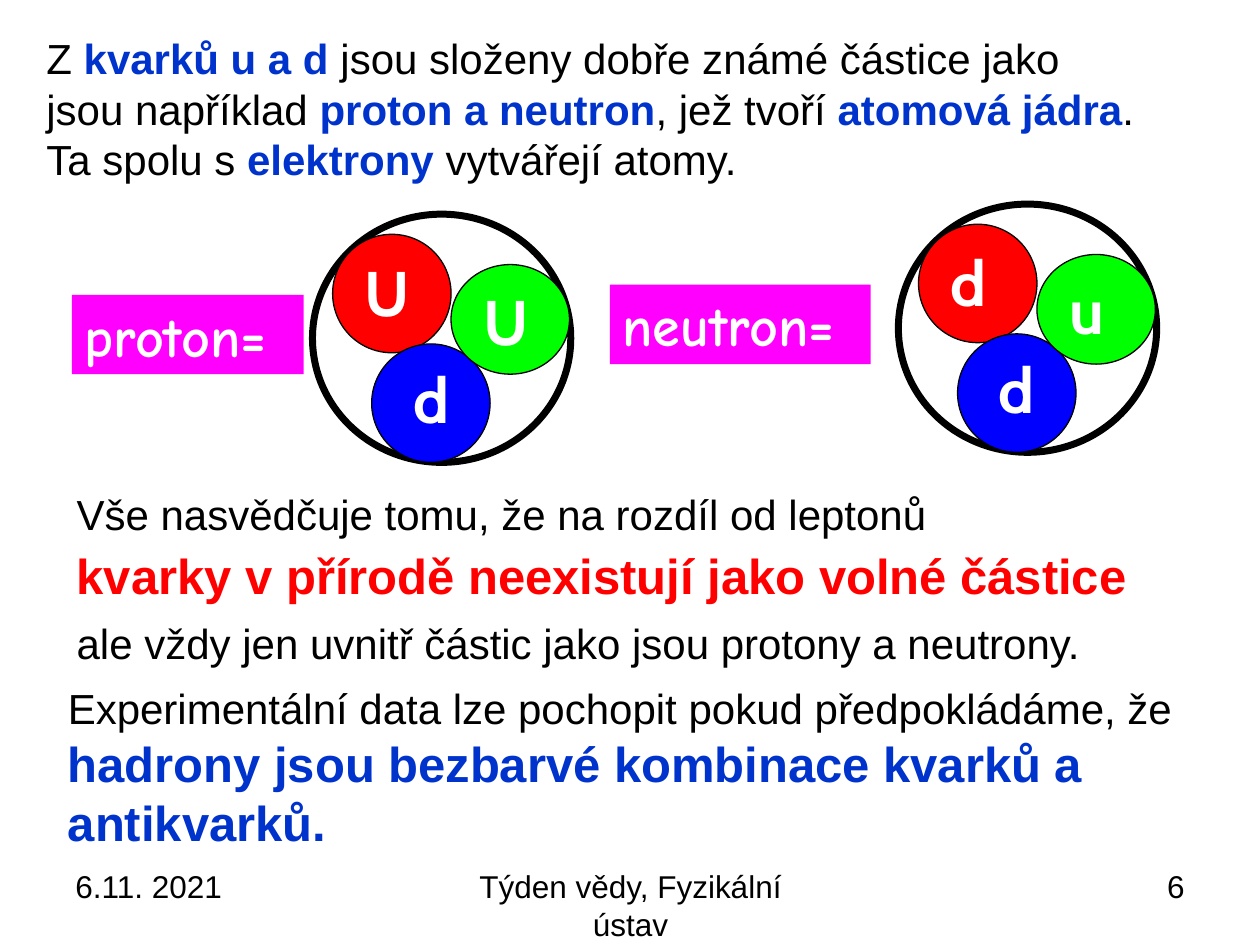
from pptx import Presentation, util as u
from pptx.dml import color
from pptx.enum import shapes, text

COLUMNS, ROWS = 100, 75
CELL = u.Inches(0.1)
BLACK, WHITE, RED, GREEN, BLUE = "000000", "FFFFFF", "FF0000", "00FF00", "0000FF"
ACCENT, MAGENTA = "0033CC", "FF00FF"
LEFT, CENTER, RIGHT = text.PP_ALIGN.LEFT, text.PP_ALIGN.CENTER, text.PP_ALIGN.RIGHT

PLAIN = {"size": u.Pt(24), "name": "Arial", "bold": False, "color": BLACK}
STRONG = PLAIN | {"bold": True, "color": ACCENT}
LARGE = STRONG | {"size": u.Pt(28)}
WARNING = LARGE | {"color": RED}
FOOTER = PLAIN | {"size": u.Pt(18)}
LETTER = {"size": u.Pt(36), "name": "Cabin", "bold": True, "color": WHITE}
LABEL = LETTER | {"size": u.Pt(32), "name": "Comic Neue"}

# Quark circle (column, row, width, height, fill) and its letter (column, row),
# measured from the corner of the hadron
QUARKS = [
    ((1.6, 1.6, 9.4, 9.4, RED), (3.15, 2.6)),
    ((4.7, 10.3, 9.4, 9.4, BLUE), (7, 11.1)),
    ((11, 4, 9.4, 8.7, GREEN), (12.6, 4.9)),
]


def rgb(value):
    return color.RGBColor.from_string(value)


def cells(*lengths):
    return [round(length * CELL) for length in lengths]


def write(box, spans, align=LEFT):
    """Fill a box with one paragraph of (wording, format) spans."""
    frame = box.text_frame
    frame.word_wrap = True
    frame.vertical_anchor = text.MSO_ANCHOR.TOP
    para = frame.paragraphs[0]
    para.alignment = align
    for wording, style in spans:
        span = para.add_run()
        span.text = wording
        for key, value in style.items():
            if key == "color":
                span.font.color.rgb = rgb(value)
            else:
                setattr(span.font, key, value)


def add_text(parent, place, spans, align=LEFT):
    write(parent.shapes.add_textbox(*cells(*place)), spans, align)


def add_figure(parent, kind, place, fill=None, line=None):
    figure = parent.shapes.add_shape(kind, *cells(*place))
    figure.shadow.inherit = False
    if fill:
        figure.fill.solid()
        figure.fill.fore_color.rgb = rgb(fill)
    else:
        figure.fill.background()
    if line:
        figure.line.color.rgb = rgb(BLACK)
        figure.line.width = u.Pt(line)
    else:
        figure.line.fill.background()
    return figure


def add_label(page, place, wording):
    box = add_figure(page, shapes.MSO_SHAPE.RECTANGLE, place, MAGENTA)
    write(box, [(wording, LABEL)])


def add_hadron(page, column, row, letters):
    """Draw a ring that holds three quarks, lettered red, blue, green."""
    group = page.shapes.add_group_shape()
    oval = shapes.MSO_SHAPE.OVAL
    add_figure(group, oval, (column, row, 20.5, 19.7), line=4)
    for (x, y, width, height, fill), _ in QUARKS:
        add_figure(group, oval, (column + x, row + y, width, height), fill, 0.75)
    for letter, (_, (x, y)) in zip(letters, QUARKS):
        width = 5.6 if letter == "U" else 4.8
        add_text(group, (column + x, row + y, width, 7), [(letter, LETTER)])


def main():
    deck = Presentation()
    deck.slide_width, deck.slide_height = COLUMNS * CELL, ROWS * CELL
    page = deck.slides.add_slide(deck.slide_layouts[6])

    add_text(page, (2.7, 2.1, 89, 13.1), [
        ("Z ", PLAIN), ("kvarků u a d ", STRONG),
        ("jsou složeny dobře známé částice jako jsou například ", PLAIN),
        ("proton a neutron", STRONG), (", jež tvoří ", PLAIN),
        ("atomová jádra", STRONG), (". Ta spolu s ", PLAIN),
        ("elektrony", STRONG), (" vytvářejí atomy.", PLAIN),
    ])

    add_hadron(page, 24.8, 17, "UdU")
    add_label(page, (5.7, 23.4, 18.4, 6.3), "proton=")
    add_label(page, (48.4, 22.6, 20.7, 6.3), "neutron=")
    add_hadron(page, 71.3, 16.2, "ddu")

    add_text(page, (5.1, 38.3, 89.8, 5),
             [("Vše nasvědčuje tomu, že na rozdíl od leptonů", PLAIN)])
    add_text(page, (5.1, 42.8, 89.8, 5.7),
             [("kvarky v přírodě neexistují jako volné částice", WARNING)])
    add_text(page, (5.1, 48.5, 89.8, 5),
             [("ale vždy jen uvnitř částic jako jsou protony a neutrony.", PLAIN)])
    add_text(page, (4.4, 53.7, 90.6, 14.5), [
        ("Experimentální data lze pochopit pokud předpokládáme, že ", PLAIN),
        ("hadrony jsou bezbarvé kombinace kvarků a antikvarků.", LARGE),
    ])

    for column, width, wording, align in [
        (5, 23.3, "6.11. 2021", LEFT),
        (34.2, 31.7, "Týden vědy, Fyzikální ústav", CENTER),
        (71.7, 23.3, "6", RIGHT),
    ]:
        add_text(page, (column, 68.3, width, 5.2), [(wording, FOOTER)], align)

    deck.save("out.pptx")


if __name__ == "__main__":
    main()
